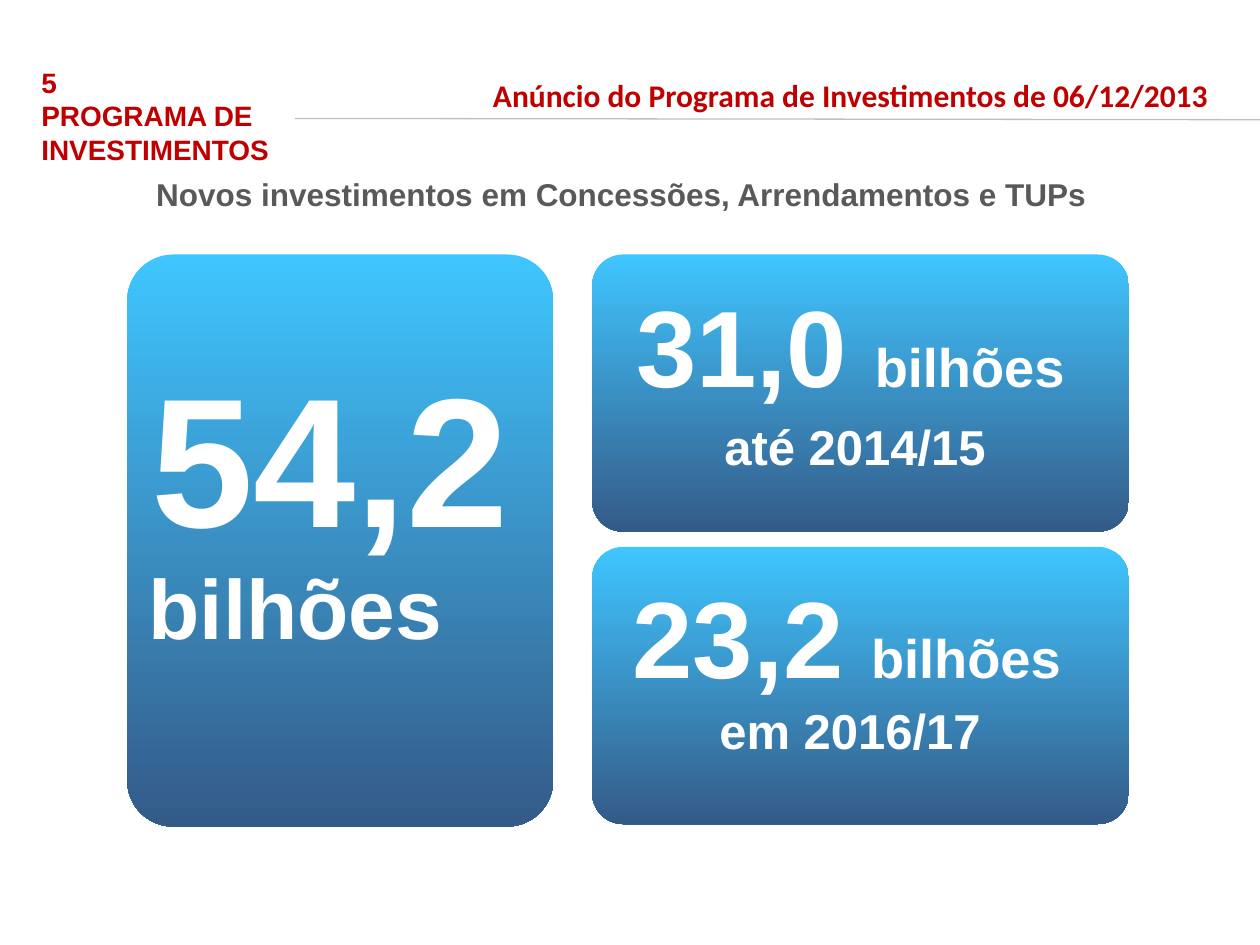
"""Build the investment programme slide with its three amount cards."""
from lxml import etree
from pptx import Presentation
from pptx import util as u
from pptx.dml.color import RGBColor
from pptx.enum import shapes, text
from pptx.oxml.ns import qn

COLORS = {"red": "C00000", "gray": "595959", "rule": "BFBFBF",
          "white": "FFFFFF", "sky": "2BC0FF", "navy": "1F497C"}
WIDTH, HEIGHT = 10, 7.5
COLUMNS, ROWS = 100, 75


def color(name):
    return RGBColor.from_string(COLORS[name])


def write(paragraph, content, size, tint="white", font="Arial", align=text.PP_ALIGN.LEFT):
    """Append bold text to a paragraph, with a line break at each newline."""
    paragraph.alignment = align
    for index, line in enumerate(content.split("\n")):
        if index:
            paragraph.add_line_break()
        run = paragraph.add_run()
        run.text = line
        run.font.size, run.font.bold = u.Pt(size), True
        run.font.name, run.font.color.rgb = font, color(tint)


class SlideBuilder:
    """Hold the style and the current slide, placing elements on a 100 by 75 grid."""

    def __init__(self, presentation):
        self.presentation = presentation
        self.slide = presentation.slides.add_slide(presentation.slide_layouts[5])

    def place(self, column, row, columns=0, rows=0):
        across = self.presentation.slide_width / COLUMNS
        down = self.presentation.slide_height / ROWS
        return [u.Emu(round(value)) for value in
                (column * across, row * down, columns * across, rows * down)]

    def frame(self, shape, margins):
        frame = shape.text_frame
        frame.word_wrap = True
        frame.auto_size = text.MSO_AUTO_SIZE.NONE
        frame.vertical_anchor = text.MSO_ANCHOR.TOP
        frame.margin_left, frame.margin_top, frame.margin_right, frame.margin_bottom = (
            u.Inches(margin) for margin in margins)
        return frame.paragraphs[0]

    def title(self, grid, content, **style):
        shape = self.slide.shapes.title
        shape.left, shape.top, shape.width, shape.height = self.place(*grid)
        write(self.frame(shape, (0.1, 0.05, 0.1, 0.05)), content, **style)

    def label(self, grid, content, margins=(0.1, 0.05, 0.1, 0.05), **style):
        shape = self.slide.shapes.add_textbox(*self.place(*grid))
        write(self.frame(shape, margins), content, **style)

    def figure(self, grid, *parts):
        shape = self.slide.shapes.add_textbox(*self.place(*grid))
        lead = 0.0015 * parts[0][1]
        paragraph = self.frame(shape, (0, lead, 0, 0))
        for content, size in parts:
            write(paragraph, content, size)

    def card(self, grid, rounding):
        shape = self.slide.shapes.add_shape(
            shapes.MSO_SHAPE.ROUNDED_RECTANGLE, *self.place(*grid))
        shape.adjustments[0] = rounding
        shape.shadow.inherit = False
        shape.line.fill.background()
        shape.fill.gradient()
        shape.fill.gradient_angle = 270
        for stop, name in zip(shape.fill.gradient_stops, ("sky", "navy")):
            stop.color.rgb = color(name)
        for element in shape.fill._xPr.iter(qn("a:srgbClr")):
            etree.SubElement(element, qn("a:alpha")).set("val", "90000")

    def rule(self, start, end):
        begin, finish = self.place(*start)[:2], self.place(*end)[:2]
        line = self.slide.shapes.add_connector(
            shapes.MSO_CONNECTOR.STRAIGHT, *begin, *finish)
        line.line.color.rgb, line.line.width = color("rule"), u.Pt(0.75)
        etree.SubElement(line._element.spPr, qn("a:effectLst"))


def main():
    presentation = Presentation()
    presentation.slide_width, presentation.slide_height = u.Inches(WIDTH), u.Inches(HEIGHT)
    builder = SlideBuilder(presentation)

    for row in (20.2, 43.4):
        builder.card((47, row, 42.6, 22), 0.112)
    builder.card((10.1, 20.2, 33.8, 45.4), 0.108)

    builder.figure((11.8, 43.4, 30.4, 8), ("bilhões", 48))
    builder.figure((12, 25.7, 30.5, 17.7), ("54,2", 105))
    for column, row, amount in ((50.5, 21.2, "31,0"), (50.2, 44.3, "23,2")):
        builder.figure((column, row, 39, 10.1), (amount, 62), (" ", 56), ("bilhões", 31))
    builder.figure((57.5, 32.6, 21.7, 6), ("até 2014/15", 28))
    builder.figure((57.1, 55.2, 22.8, 6), ("em 2016/17", 28))

    builder.label((11.7, 13.3, 75.6, 3.7),
                  "Novos investimentos em Concessões, Arrendamentos e TUPs",
                  margins=(0.07, 0.06, 0.07, 0.04), size=18, tint="gray")
    builder.rule((23.4, 9.4), (100, 9.5))
    builder.label((2.3, 4.7, 29.7, 8.5), "5\nPROGRAMA DE INVESTIMENTOS", size=16, tint="red")
    builder.title((34.4, 5.5, 62.5, 4), "Anúncio do Programa de Investimentos de 06/12/2013",
                  size=18, tint="red", font="Calibri", align=text.PP_ALIGN.RIGHT)
    presentation.save("out.pptx")


if __name__ == "__main__":
    main()
